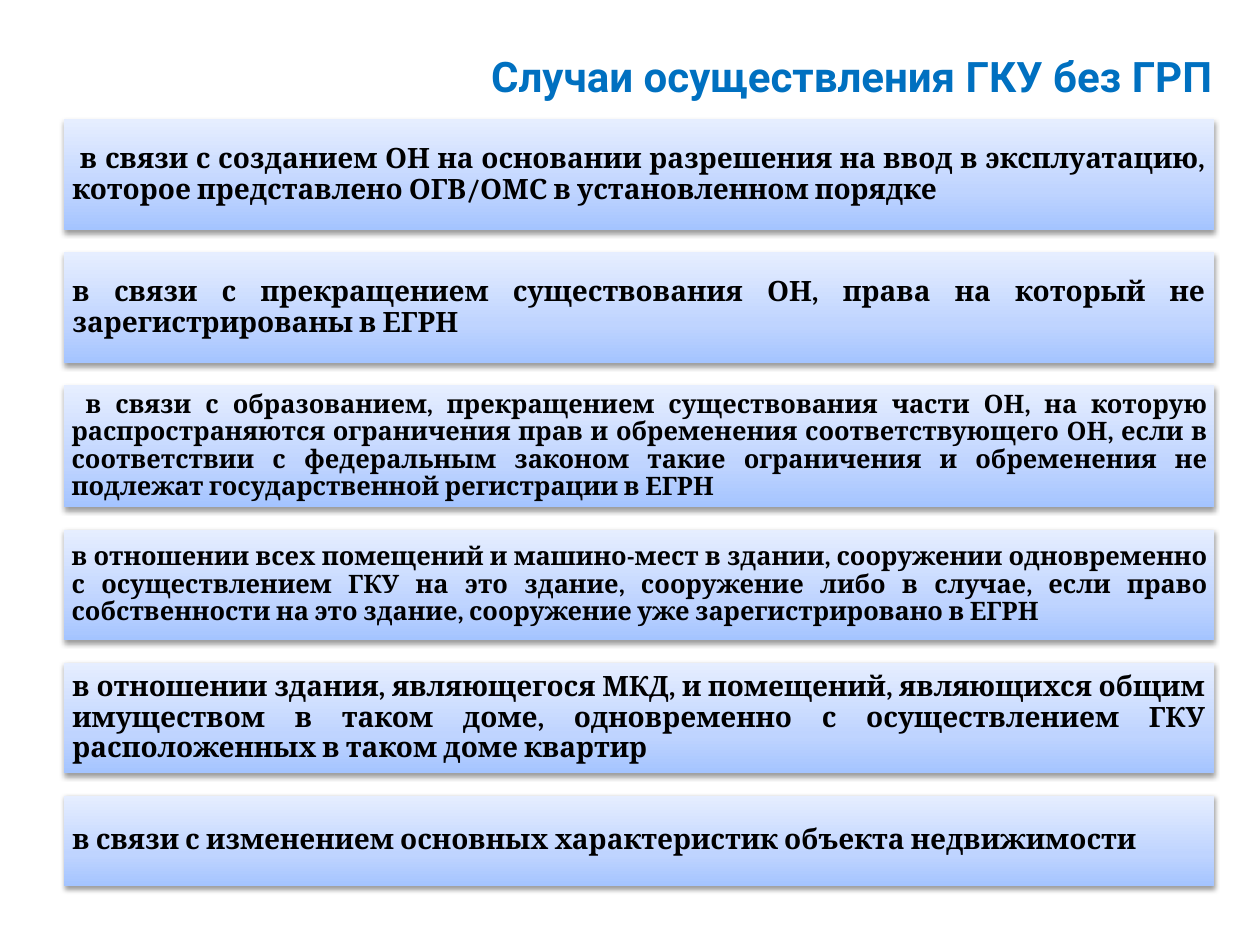
from lxml.etree import SubElement
from copy import deepcopy
from pptx import Presentation
from pptx.dml.color import RGBColor
from pptx.enum.shapes import MSO_SHAPE as Shape
from pptx.enum.text import MSO_ANCHOR as Anchor, PP_ALIGN as Align
from pptx.oxml.ns import qn
from pptx.util import Pt

BAR_GRADIENT = [(0, "A4C4FF"), (0.35, "BFD4FF"), (1, "E6EEFF")]
BAR_GAP = 12.6
CASES = [
    (63.4, 16, Align.JUSTIFY, " в связи с созданием ОН на основании разрешения на ввод в эксплуатацию, "
     "которое представлено ОГВ/ОМС в установленном порядке"),
    (63.4, 16, Align.JUSTIFY, "в связи с прекращением существования ОН, права на который не "
     "зарегистрированы в ЕГРН"),
    (69.8, 14.5, Align.JUSTIFY, " в связи с образованием, прекращением существования части ОН, на которую "
     "распространяются ограничения прав и обременения соответствующего ОН, если в "
     "соответствии с федеральным законом такие ограничения и обременения не "
     "подлежат государственной регистрации в ЕГРН"),
    (63.4, 14.5, Align.JUSTIFY, "в отношении всех помещений и машино-мест в здании, сооружении одновременно "
     "с осуществлением ГКУ на это здание, сооружение либо в случае, если право "
     "собственности на это здание, сооружение уже зарегистрировано в ЕГРН"),
    (63.4, 16, Align.JUSTIFY, "в отношении здания, являющегося МКД, и помещений, являющихся общим "
     "имуществом в таком доме, одновременно с осуществлением ГКУ "
     "расположенных в таком доме квартир"),
    (51.8, 16, Align.LEFT, "в связи с изменением основных характеристик объекта недвижимости"),
]


def color(hex_code):
    return RGBColor.from_string(hex_code)


def fill_gradient(bar):
    bar.fill.gradient()
    bar.fill.gradient_angle = 90
    stop_list = bar._element.spPr.find(qn("a:gradFill")).find(qn("a:gsLst"))
    stop_list.append(deepcopy(stop_list[0]))
    for stop, (position, hex_code) in zip(bar.fill.gradient_stops, BAR_GRADIENT):
        stop.position = position
        stop.color.rgb = color(hex_code)


def drop_shadow(bar):
    bar.shadow.inherit = False
    effects = bar._element.spPr.find(qn("a:effectLst"))
    shadow = SubElement(effects, qn("a:outerShdw"), blurRad=str(Pt(3.1)), dist=str(Pt(1.6)),
                        dir="5400000", rotWithShape="0")
    black = SubElement(shadow, qn("a:srgbClr"), val="000000")
    SubElement(black, qn("a:alpha"), val="38000")


def write_text(frame, text, font_name, size, hex_code, align):
    frame.word_wrap = True
    frame.vertical_anchor = Anchor.MIDDLE
    paragraph = frame.paragraphs[0]
    paragraph.text = text
    paragraph.alignment = align
    font = paragraph.font
    font.name, font.size, font.bold = font_name, Pt(size), True
    font.color.rgb = color(hex_code)
    return paragraph


def add_title(slide, left, top, width, height):
    title = slide.shapes.add_textbox(Pt(left), Pt(top), Pt(width), Pt(height))
    write_text(title.text_frame, "Случаи осуществления ГКУ без ГРП", "Roboto", 24, "0070C0", Align.RIGHT)


def add_case(slide, left, top, width, height, text, size, align):
    bar = slide.shapes.add_shape(Shape.RECTANGLE, Pt(left), Pt(top), Pt(width), Pt(height))
    fill_gradient(bar)
    bar.line.fill.background()
    drop_shadow(bar)
    frame = bar.text_frame
    inset = Pt(size * 0.3)
    frame.margin_left = frame.margin_top = frame.margin_right = frame.margin_bottom = inset
    write_text(frame, text, "Cambria", size, "000000", align).line_spacing = 0.9


def add_case_list(slide, left, top, width):
    for height, size, align, text in CASES:
        add_case(slide, left, top, width, height, text, size, align)
        top += height + BAR_GAP


def main():
    deck = Presentation()
    deck.slide_width, deck.slide_height = Pt(720), Pt(540)
    slide = deck.slides.add_slide(deck.slide_layouts[6])
    add_case_list(slide, 36.6, 68.2, 657.4)
    add_title(slide, 42.5, 25.2, 657.4, 36)
    deck.save("out.pptx")


if __name__ == "__main__":
    main()
